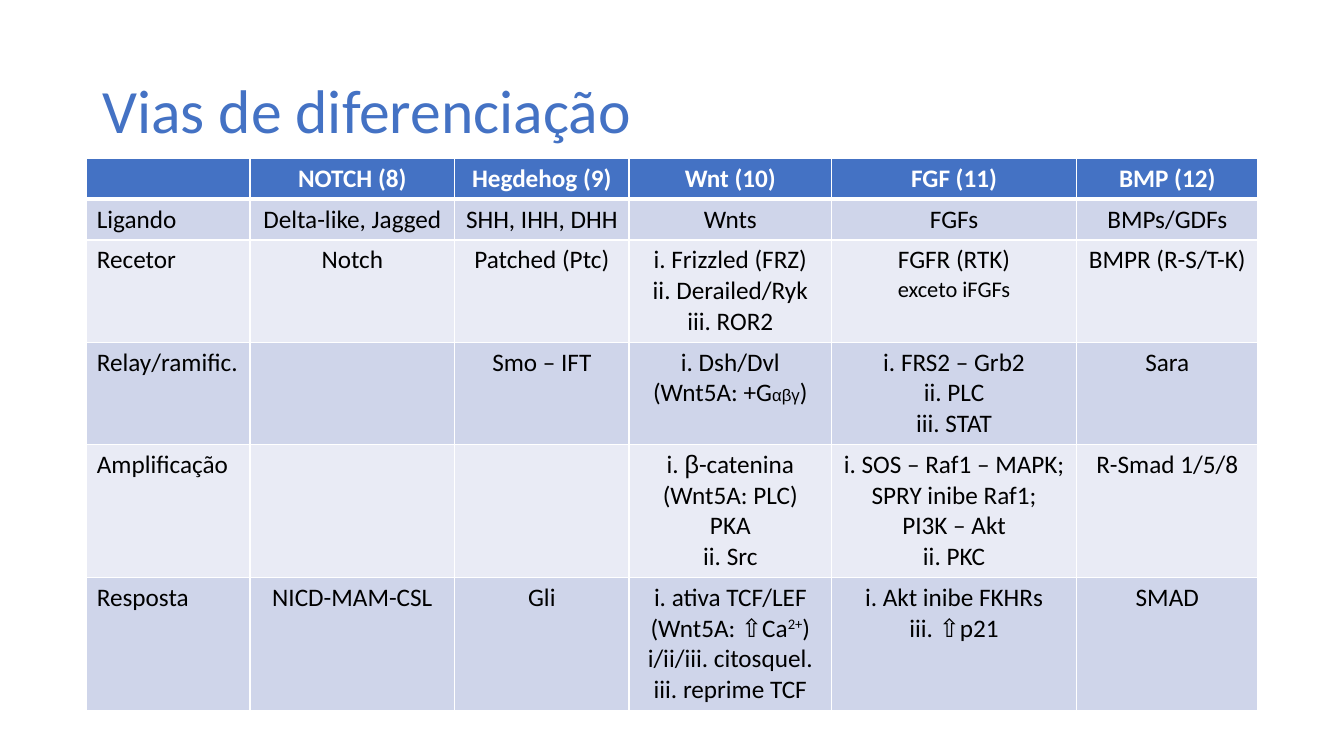
"""Build the slide on differentiation pathways: a title above a table."""
from dataclasses import dataclass

from lxml import etree
from pptx import Presentation
from pptx.dml.color import RGBColor
from pptx.enum.text import MSO_ANCHOR, PP_ALIGN
from pptx.oxml.ns import qn
from pptx.util import Pt

CENTER, LEFT, MIDDLE = PP_ALIGN.CENTER, PP_ALIGN.LEFT, MSO_ANCHOR.MIDDLE
COLORS = {"accent": "4472C4", "odd": "CFD5EA", "even": "E9EBF5",
          "white": "FFFFFF", "black": "000000"}


@dataclass(frozen=True)
class Run:
    text: str
    size: float = 18
    font: str = "Calibri"
    baseline: int = 0
    break_before: bool = False


@dataclass(frozen=True)
class Row:
    height: float
    cells: tuple


COLUMNS = (116.64, 146.16, 124.56, 144.72, 174.96, 129.6)
ROWS = (
    Row(29.2, ("", "NOTCH (8)", "Hegdehog (9)", "Wnt (10)", "FGF (11)", "BMP (12)")),
    Row(29.2, ("Ligando", "Delta-like, Jagged", "SHH, IHH, DHH", "Wnts", "FGFs",
               "BMPs/GDFs")),
    Row(73, ("Recetor", "Notch", "Patched (Ptc)",
             ("i. Frizzled (FRZ)", "ii. Derailed/Ryk", "iii. ROR2"),
             ((Run("FGFR (RTK)"), Run("exceto iFGFs", size=16, break_before=True)),),
             "BMPR (R-S/T-K)")),
    Row(73, ("Relay/ramific.", "", "Smo – IFT",
             ("i. Dsh/Dvl",
              (Run("(Wnt5A: +G"), Run("αβγ", size=12, font="Arial"), Run(")"))),
             ("i. FRS2 – Grb2", "ii. PLC", "iii. STAT"), "Sara")),
    Row(95, ("Amplificação", "", "",
             ((Run("i. "), Run("β", font="Arial"), Run("-catenina")),
              "(Wnt5A: PLC)", "PKA", "ii. Src"),
             ("i. SOS – Raf1 – MAPK;", "SPRY inibe Raf1;", "PI3K – Akt", "ii. PKC"),
             "R-Smad 1/5/8")),
    Row(95, ("Resposta", "NICD-MAM-CSL", "Gli",
             ((Run("i. ativa TCF/LEF (Wnt5A: ⇧Ca"), Run("2+", baseline=30000), Run(")")),
              "i/ii/iii. citosquel.", "iii. reprime TCF"),
             ("i. Akt inibe FKHRs", "iii. ⇧p21"), "SMAD")),
)


def add_run(p, run: Run, color: str, bold: bool = False) -> None:
    """Append a formatted run to a paragraph."""
    if run.break_before:
        p.add_line_break()
    r = p.add_run()
    r.text = run.text
    formats = {"size": Pt(run.size), "name": run.font, "bold": bold}
    for name, value in formats.items():
        setattr(r.font, name, value)
    r.font.color.rgb = RGBColor.from_string(COLORS[color])
    if run.baseline:
        r._r.get_or_add_rPr().set("baseline", str(run.baseline))


def add_borders(cell, bottom: float, top: float) -> None:
    """Draw white lines on the four sides of a cell."""
    tc_pr = cell._tc.get_or_add_tcPr()
    for side, width in {"L": 1, "R": 1, "T": top, "B": bottom}.items():
        line = etree.SubElement(tc_pr, qn(f"a:ln{side}"), w=str(Pt(width)))
        fill = etree.SubElement(line, qn("a:solidFill"))
        etree.SubElement(fill, qn("a:srgbClr"), val=COLORS["white"])


def fill_cell(cell, content, row: int, column: int) -> None:
    """Style a cell and write its paragraphs."""
    header = row == 0
    add_borders(cell, bottom=3 if header else 1, top=3 if row == 1 else 1)
    fill = "accent" if header else "odd" if row % 2 else "even"
    cell.fill.solid()
    cell.fill.fore_color.rgb = RGBColor.from_string(COLORS[fill])
    paragraphs = (content,) if isinstance(content, str) else content
    tf = cell.text_frame
    for i, paragraph in enumerate(paragraphs):
        p = tf.add_paragraph() if i else tf.paragraphs[0]
        p.alignment = CENTER if column else LEFT
        runs = (Run(paragraph),) if isinstance(paragraph, str) else paragraph
        for run in runs:
            if run.text:
                add_run(p, run, "white" if header else "black", header)


def add_title(s) -> None:
    """Add the slide title."""
    sp = s.shapes.add_textbox(Pt(66), Pt(28.8), Pt(828), Pt(104.4))
    tf = sp.text_frame
    for name, value in {"word_wrap": True, "vertical_anchor": MIDDLE}.items():
        setattr(tf, name, value)
    p = tf.paragraphs[0]
    p.line_spacing = 0.9
    add_run(p, Run("Vias de diferenciação", size=44), "accent")


def add_pathways(s) -> None:
    """Add the table of pathways."""
    height = sum(row.height for row in ROWS)
    sp = s.shapes.add_table(len(ROWS), len(COLUMNS), Pt(62), Pt(113),
                            Pt(sum(COLUMNS)), Pt(height))
    table = sp.table
    for column, width in zip(table.columns, COLUMNS):
        column.width = Pt(width)
    for i, row in enumerate(ROWS):
        table.rows[i].height = Pt(row.height)
        for j, content in enumerate(row.cells):
            fill_cell(table.cell(i, j), content, i, j)


def main() -> None:
    """Create and save the presentation."""
    prs = Presentation()
    prs.slide_width, prs.slide_height = Pt(960), Pt(540)
    s = prs.slides.add_slide(prs.slide_layouts[6])
    add_title(s)
    add_pathways(s)
    prs.save("out.pptx")


if __name__ == "__main__":
    main()
